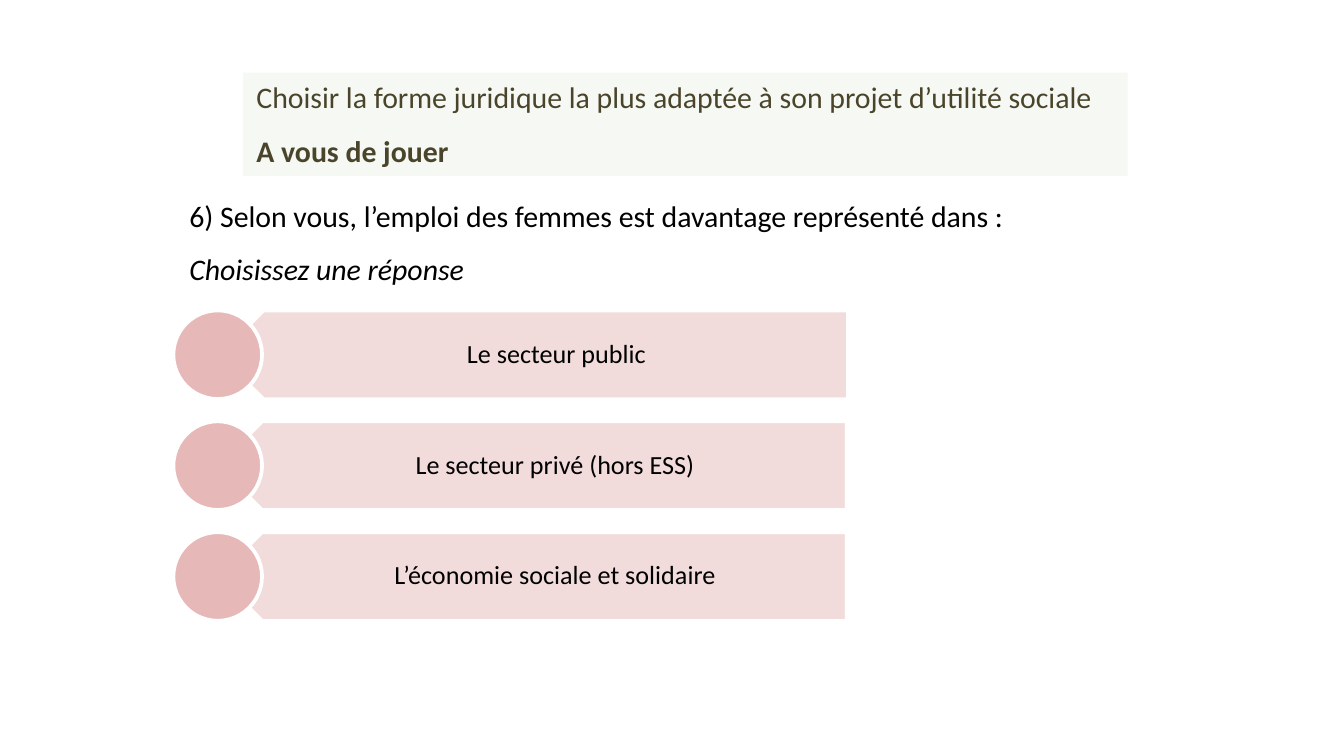
"""Build the quiz slide on women's employment by sector."""
from pptx import Presentation
from pptx.dml.color import RGBColor
from pptx.enum.shapes import MSO_SHAPE
from pptx.enum.text import MSO_ANCHOR, PP_ALIGN
from pptx.util import Inches, Pt

WIDTH = 10
HEIGHT = WIDTH * 9 / 16
HEADS = [
    ((1.31, 1.42, 7.45, 0.77), None, "000000", [
        ("6) Selon vous, l’emploi des femmes est davantage représenté dans :", {}),
        ("Choisissez une réponse", {"italic": True})]),
    ((1.81, 0.54, 6.58, 0.77), "F6F8F4", "4A452A", [
        ("Choisir la forme juridique la plus adaptée à son projet d’utilité sociale", {}),
        ("A vous de jouer", {"bold": True})]),
]
CHOICES = [
    ("Le secteur public", 1.63),
    ("Le secteur privé (hors ESS)", 1.62),
    ("L’économie sociale et solidaire", 1.62),
]
TOP, LAST, SIZE = 2.31, 3.96, 0.66
STEP = (LAST - TOP) / (len(CHOICES) - 1)
DOT, BAR, INDENT = 1.29, 4.68, 0.16
PADS = {"margin_left": 0.29, "margin_top": 0.06,
        "margin_right": 0.11, "margin_bottom": 0.06}


def color(code):
    return RGBColor.from_string(code)


def write(para, words, size, ink, style):
    run = para.add_run()
    run.text = words
    font = {"name": "Calibri", "size": Pt(size), **style}
    for key, value in font.items():
        setattr(run.font, key, value)
    run.font.color.rgb = color(ink)


def draw(slide, kind, box, fill):
    shape = slide.shapes.add_shape(kind, *map(Inches, box))
    shape.shadow.inherit = False
    shape.fill.solid()
    shape.fill.fore_color.rgb = color(fill)
    shape.line.color.rgb = color("FFFFFF")
    shape.line.width = Pt(2)
    return shape


def label(slide, box):
    shape = slide.shapes.add_textbox(*map(Inches, box))
    shape.text_frame.word_wrap = True
    return shape


def choice(slide, row, words, left):
    top = TOP + row * STEP
    plate = draw(slide, MSO_SHAPE.PENTAGON, (left, top, BAR, SIZE), "F2DCDB")
    plate.rotation = 180
    frame = label(slide, (left + INDENT, top, BAR - INDENT, SIZE)).text_frame
    frame.vertical_anchor = MSO_ANCHOR.MIDDLE
    for key, value in PADS.items():
        setattr(frame, key, Inches(value))
    para = frame.paragraphs[0]
    para.alignment = PP_ALIGN.CENTER
    para.line_spacing = 0.9
    write(para, words, 14, "000000", {})
    draw(slide, MSO_SHAPE.OVAL, (DOT, top, SIZE, SIZE), "E6B9B8")


def head(slide, box, fill, ink, lines):
    shape = label(slide, box)
    if fill:
        shape.fill.solid()
        shape.fill.fore_color.rgb = color(fill)
    frame = shape.text_frame
    for row, (words, style) in enumerate(lines):
        para = frame.add_paragraph() if row else frame.paragraphs[0]
        para.line_spacing = 1.5 if row else 1.0
        write(para, words, 16, ink, style)


def main():
    deck = Presentation()
    deck.slide_width, deck.slide_height = Inches(WIDTH), Inches(HEIGHT)
    slide = deck.slides.add_slide(deck.slide_layouts[6])
    for row, (words, left) in enumerate(CHOICES):
        choice(slide, row, words, left)
    for item in HEADS:
        head(slide, *item)
    deck.save("out.pptx")


if __name__ == "__main__":
    main()
